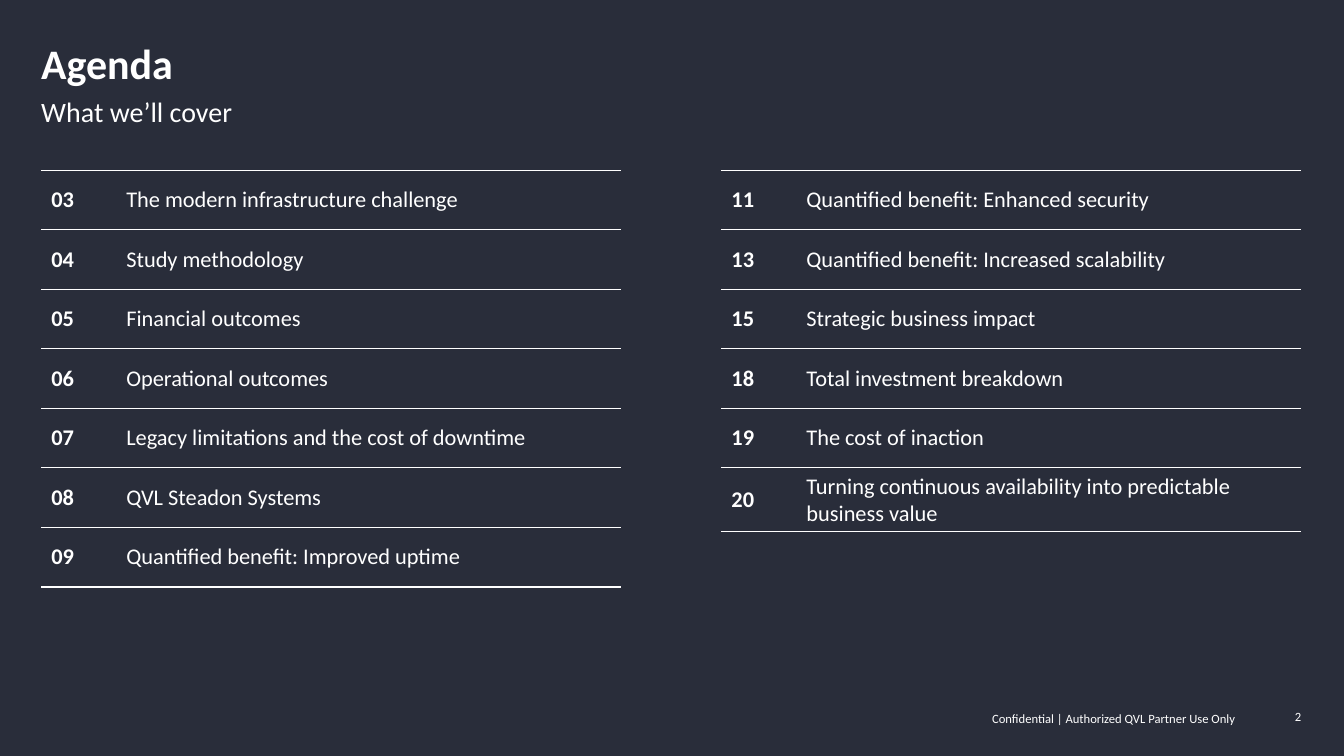
"""Build the agenda slide with two ruled lists of page numbers and topics."""
from lxml import etree
from pptx import Presentation
from pptx import util as u
from pptx.dml.color import RGBColor
from pptx.enum import text
from pptx.oxml.ns import qn

TITLE = "Agenda"
SUBTITLE = "What we’ll cover"
FOOTER = "Confidential | Authorized QVL Partner Use Only"
PAGE = "2"
AGENDA = [
    [
        ("03", "The modern infrastructure challenge"),
        ("04", "Study methodology"),
        ("05", "Financial outcomes"),
        ("06", "Operational outcomes"),
        ("07", "Legacy limitations and the cost of downtime"),
        ("08", "QVL Steadon Systems"),
        ("09", "Quantified benefit: Improved uptime"),
    ],
    [
        ("11", "Quantified benefit: Enhanced security"),
        ("13", "Quantified benefit: Increased scalability"),
        ("15", "Strategic business impact"),
        ("18", "Total investment breakdown"),
        ("19", "The cost of inaction"),
        ("20", "Turning continuous availability into predictable business value"),
    ],
]
THEME = {
    "font": "Calibri", "ink": "FFFFFF", "ground": "292D3A",
    "title": 30, "subtitle": 20, "topic": 16, "small": 9,
}
SLIDE_WIDTH, SLIDE_HEIGHT = 33.87, 19.05
MARGIN = 1.04
CONTENT_WIDTH = 31.75
NUMBER_WIDTH, TOPIC_WIDTH = 1.89, 12.72
LIST_WIDTH = NUMBER_WIDTH + TOPIC_WIDTH
LIST_TOP, ROW_HEIGHT = 4.29, 1.5
LIST_STEP = CONTENT_WIDTH - LIST_WIDTH
FOOTER_TOP, FOOTER_HEIGHT = 17.78, 0.53


def write(frame, words, size, bold=False, align=text.PP_ALIGN.LEFT, spacing=None):
    """Put formatted words into a text frame."""
    frame.word_wrap = True
    paragraph = frame.paragraphs[0]
    paragraph.alignment = align
    if spacing:
        paragraph.line_spacing = spacing
    run = paragraph.add_run()
    run.text = words
    run.font.name = THEME["font"]
    run.font.size = u.Pt(THEME[size])
    run.font.bold = bold
    run.font.color.rgb = RGBColor.from_string(THEME["ink"])


def add_words(slide, words, size, box, insets=(0.25, 0.13, 0.25, 0.13),
              anchor=text.MSO_ANCHOR.TOP, **style):
    """Place a text box, with box and insets in centimetres."""
    frame = slide.shapes.add_textbox(*map(u.Cm, box)).text_frame
    (frame.margin_left, frame.margin_top,
     frame.margin_right, frame.margin_bottom) = map(u.Cm, insets)
    frame.vertical_anchor = anchor
    write(frame, words, size, **style)


def rule_cell(cell):
    """Leave the cell clear, with rules above and below only."""
    cell.fill.background()
    properties = cell._tc.get_or_add_tcPr()
    for place, side in enumerate(("lnL", "lnR", "lnT", "lnB")):
        line = etree.Element(qn(f"a:{side}"), w=str(u.Pt(1)))
        if side in ("lnT", "lnB"):
            solid = etree.SubElement(line, qn("a:solidFill"))
            etree.SubElement(solid, qn("a:srgbClr"), val=THEME["ink"])
        else:
            etree.SubElement(line, qn("a:noFill"))
        properties.insert(place, line)


def add_agenda(slide, topics, left):
    """Add one column of the agenda as a table."""
    table = slide.shapes.add_table(
        len(topics), 2, u.Cm(left), u.Cm(LIST_TOP),
        u.Cm(LIST_WIDTH), u.Cm(ROW_HEIGHT * len(topics))).table
    table.first_row = table.horz_banding = False
    for column, width in zip(table.columns, (NUMBER_WIDTH, TOPIC_WIDTH)):
        column.width = u.Cm(width)
    for row, entry in zip(table.rows, topics):
        row.height = u.Cm(ROW_HEIGHT)
        for index, (cell, words) in enumerate(zip(row.cells, entry)):
            cell.vertical_anchor = text.MSO_ANCHOR.MIDDLE
            write(cell.text_frame, words, "topic", bold=index == 0)
            rule_cell(cell)


def main():
    deck = Presentation()
    deck.slide_width, deck.slide_height = u.Cm(SLIDE_WIDTH), u.Cm(SLIDE_HEIGHT)
    slide = deck.slides.add_slide(deck.slide_layouts[6])
    ground = slide.background.fill
    ground.solid()
    ground.fore_color.rgb = RGBColor.from_string(THEME["ground"])

    add_words(slide, TITLE, "title", (MARGIN, 1.09, CONTENT_WIDTH, 1.14),
              insets=(0, 0, 0.25, 0), bold=True, spacing=0.9)
    add_words(slide, SUBTITLE, "subtitle", (MARGIN, 2.36, CONTENT_WIDTH, 1.02),
              insets=(0, 0, 0.25, 0.13), anchor=text.MSO_ANCHOR.MIDDLE)
    for index, topics in enumerate(AGENDA):
        add_agenda(slide, topics, MARGIN + index * LIST_STEP)
    add_words(slide, PAGE, "small", (31.85, FOOTER_TOP, 0.94, FOOTER_HEIGHT),
              insets=(0, 0.13, 0, 0.13), anchor=text.MSO_ANCHOR.MIDDLE,
              align=text.PP_ALIGN.RIGHT)
    add_words(slide, FOOTER, "small", (14.1, FOOTER_TOP, 17.27, FOOTER_HEIGHT),
              align=text.PP_ALIGN.RIGHT)
    deck.save("out.pptx")


if __name__ == "__main__":
    main()
